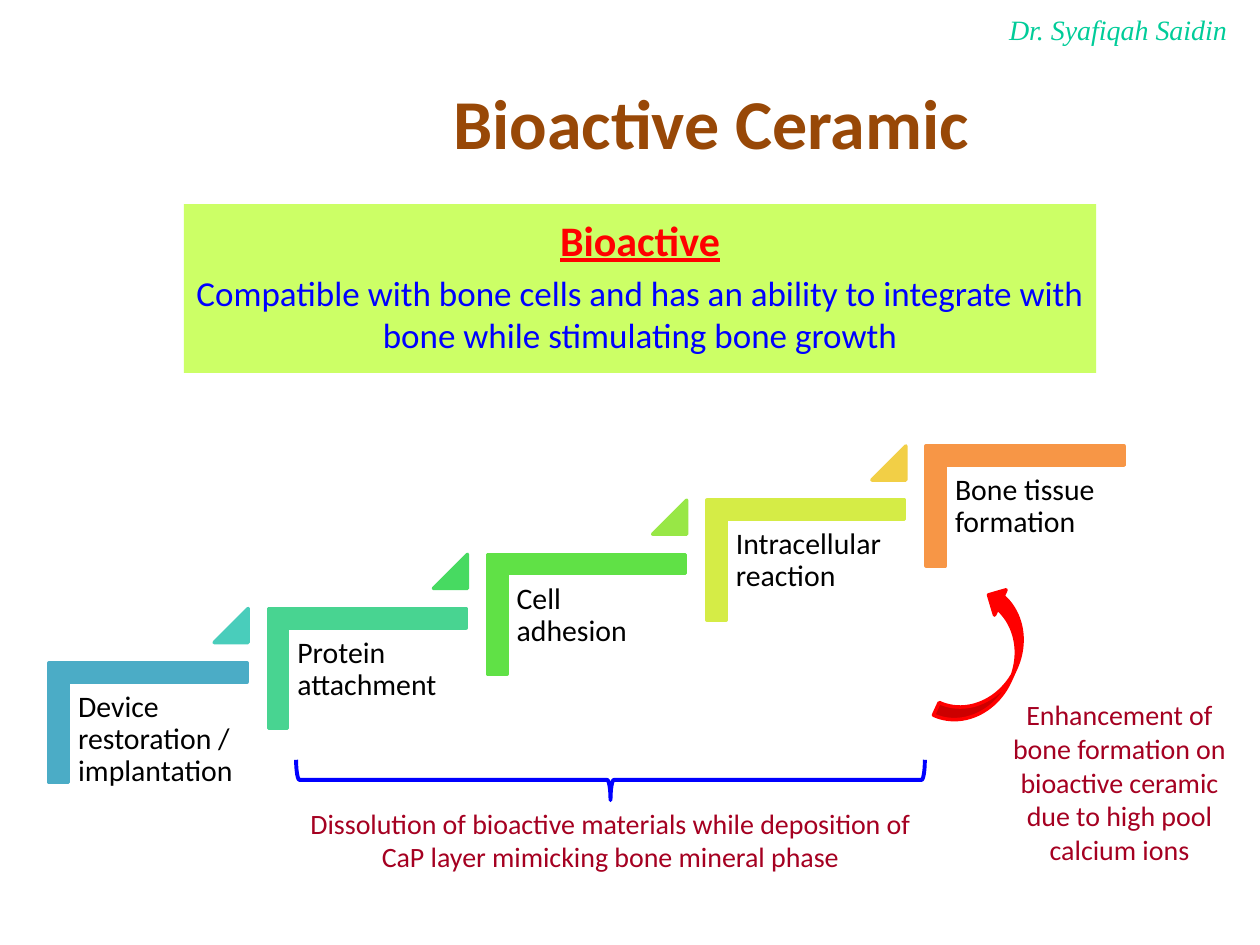
from pptx import Presentation
from pptx.dml.color import RGBColor
from pptx.enum import shapes, text
from pptx.util import Inches, Pt

COLORS = {
    "heading": "984807", "author": "00CC99", "panel": "CCFF66", "term": "FF0000",
    "definition": "0000FF", "step": "000000", "note": "A50021",
    "brace": "0000FF", "arrow": "FF0000",
}
STEPS = [
    ("Device restoration / implantation", "4BACC6", "49CDBB"),
    ("Protein attachment", "48D491", "47DA61"),
    ("Cell adhesion", "60E146", "98E746"),
    ("Intracellular reaction", "D5EC46", "F2CF46"),
    ("Bone tissue formation", "F79646", None),
]
KINDS = shapes.MSO_SHAPE
LEFT, CENTER = text.PP_ALIGN.LEFT, text.PP_ALIGN.CENTER


def apply_format(target, values):
    """Set every attribute named in values on target."""
    for name, value in values.items():
        setattr(target, name, value)


def write(paragraph, wording, size, color, align=LEFT, font="Calibri", spacing=None, **styles):
    """Fill one paragraph with a single formatted run."""
    apply_format(paragraph, {"alignment": align, **(spacing or {})})
    run = paragraph.add_run()
    run.text = wording
    apply_format(run.font, {"name": font, "size": Pt(size), **styles})
    run.font.color.rgb = RGBColor.from_string(color)


def add_label(slide, box, wording, size, color, wrap=True, inset=None, **options):
    """Place a text box holding one paragraph."""
    frame = slide.shapes.add_textbox(*map(Inches, box)).text_frame
    frame.word_wrap = wrap
    if inset is not None:
        sides = ("margin_left", "margin_top", "margin_right", "margin_bottom")
        apply_format(frame, dict.fromkeys(sides, Inches(inset)))
    write(frame.paragraphs[0], wording, size, color, **options)


def add_figure(slide, kind, box, fill=None, line=None, weight=2, turn=0, adjust=()):
    """Place a preset shape without shadow, with optional fill and outline."""
    figure = slide.shapes.add_shape(kind, *map(Inches, box))
    figure.shadow.inherit = False
    figure.rotation = turn
    for index, value in enumerate(adjust):
        figure.adjustments[index] = value
    if fill:
        figure.fill.solid()
        figure.fill.fore_color.rgb = RGBColor.from_string(fill)
    else:
        figure.fill.background()
    if line:
        figure.line.color.rgb = RGBColor.from_string(line)
        figure.line.width = Pt(weight)
    else:
        figure.line.fill.background()
    return figure


def quarter_turned(left, top, width, height):
    """Return the unrotated box that fills the given one after a 90 degree turn."""
    shift = (width - height) / 2
    return left + shift, top - shift, height, width


def add_header(slide, left, top):
    """Place the heading and the author's name."""
    add_label(slide, (left, top + 0.53, 4.34, 0.77), "Bioactive Ceramic", 40,
              COLORS["heading"], wrap=False, bold=True)
    add_label(slide, (left + 4.41, top, 2.01, 0.37), "Dr. Syafiqah Saidin", 16,
              COLORS["author"], wrap=False, font="Times New Roman", italic=True)


def add_definition(slide, box):
    """Place the panel that defines the term."""
    frame = add_figure(slide, KINDS.RECTANGLE, box, COLORS["panel"]).text_frame
    apply_format(frame, {"word_wrap": True, "vertical_anchor": text.MSO_ANCHOR.TOP,
                         "margin_top": Inches(0.08)})
    write(frame.paragraphs[0], "Bioactive", 24, COLORS["term"], CENTER,
          bold=True, underline=True)
    write(frame.add_paragraph(),
          "Compatible with bone cells and has an ability to integrate with "
          "bone while stimulating bone growth",
          20, COLORS["definition"], CENTER, spacing={"space_before": Pt(4)})


def add_step(slide, left, top, wording, color, marker):
    """Place one stair: its corner, its label and the marker to the next stair."""
    add_figure(slide, KINDS.CORNER, quarter_turned(left, top, 1.57, 0.95),
               color, color, turn=90, adjust=(0.161, 0.161))
    add_label(slide, (left + 0.16, top + 0.16, 1.42, 1.24), wording, 17,
              COLORS["step"], inset=0.07, spacing={"line_spacing": 0.9})
    if marker:
        add_figure(slide, KINDS.ISOSCELES_TRIANGLE, (left + 1.31, top - 0.43, 0.27, 0.27),
                   marker, marker, adjust=(1,))


def add_staircase(slide, left, top, run=1.74, rise=0.43):
    """Place the stairs, each one run to the right and one rise higher."""
    for index, step in enumerate(STEPS):
        add_step(slide, left + index * run, top - index * rise, *step)


def add_dissolution(slide, left, top):
    """Place the brace under the middle stairs and its note."""
    add_figure(slide, KINDS.RIGHT_BRACE, quarter_turned(left + 0.03, top, 4.99, 0.32),
               line=COLORS["brace"], weight=2.25, turn=90)
    add_label(slide, (left, top + 0.32, 5.05, 0.64),
              "Dissolution of bioactive materials while deposition of "
              "CaP layer mimicking bone mineral phase",
              16, COLORS["note"], align=CENTER)


def add_enhancement(slide, left, top):
    """Place the curved arrow to the last stair and its note."""
    add_figure(slide, KINDS.CURVED_UP_ARROW, (left, top, 1.16, 0.44),
               COLORS["arrow"], COLORS["arrow"], turn=294.6)
    add_label(slide, (left + 0.58, top + 0.47, 2.07, 1.45),
              "Enhancement of bone formation on bioactive ceramic "
              "due to high pool calcium ions",
              16, COLORS["note"], align=CENTER)


def main():
    """Build the slide and save it."""
    deck = Presentation()
    apply_format(deck, {"slide_width": Inches(10), "slide_height": Inches(7.5)})
    slide = deck.slides.add_slide(deck.slide_layouts[6])
    add_header(slide, 3.5, 0.05)
    add_definition(slide, (1.46, 1.62, 7.24, 1.34))
    add_staircase(slide, 0.39, 5.26)
    add_dissolution(slide, 2.32, 6.03)
    add_enhancement(slide, 7.27, 5.02)
    deck.save("out.pptx")


if __name__ == "__main__":
    main()
